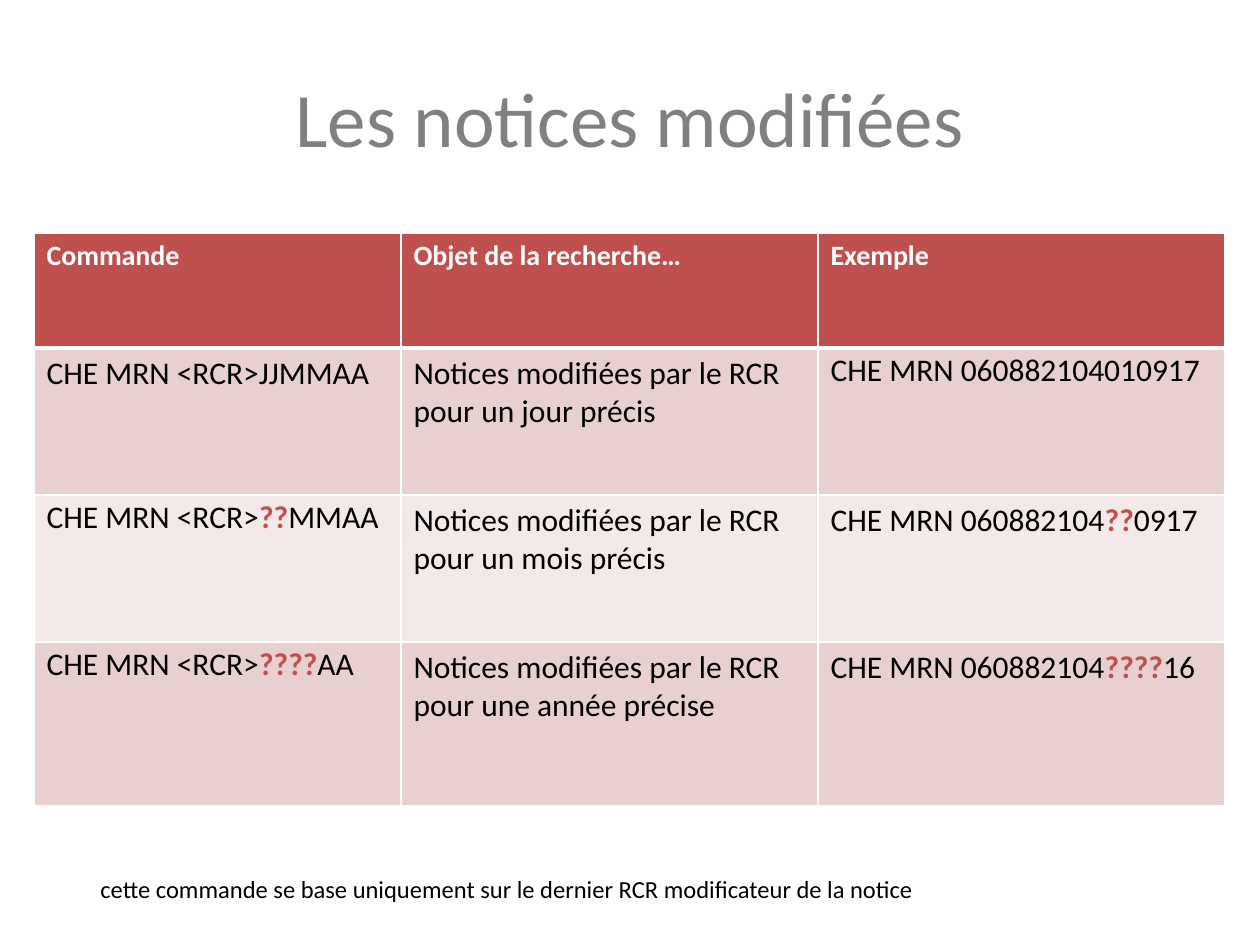
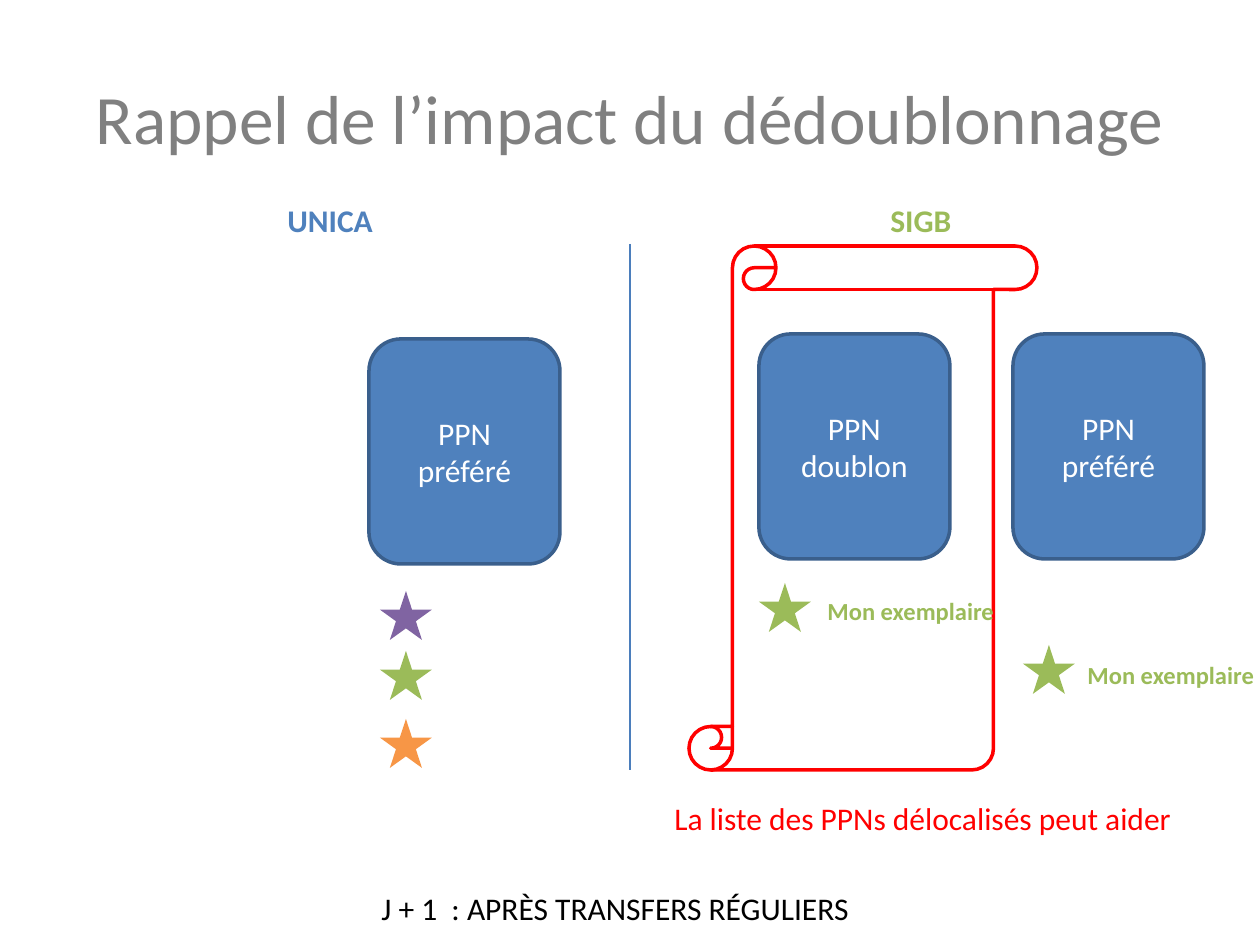
import collections
import itertools

import pptx
import pptx.dml.color
import pptx.enum.shapes
import pptx.enum.text
import pptx.oxml
import pptx.oxml.ns
import pptx.util
from lxml import etree

RGB = pptx.dml.color.RGBColor
SHAPE = pptx.enum.shapes.MSO_SHAPE
ALIGN = pptx.enum.text.PP_ALIGN
ANCHOR = pptx.enum.text.MSO_ANCHOR
Box = collections.namedtuple("Box", "left top width height")

PX_PER_INCH = 126
FONT = "Calibri"
TITLE_ONLY = 5
WHITE = RGB(0xFF, 0xFF, 0xFF)
BLACK = RGB(0x00, 0x00, 0x00)
GREY = RGB(0x80, 0x80, 0x80)
BRICK = RGB(0xC0, 0x50, 0x4D)
ROSE = RGB(0xE8, 0xD0, 0xD0)
PALE_ROSE = RGB(0xF4, 0xE9, 0xE9)
BLUE = RGB(0x4F, 0x81, 0xBD)
DIVIDER_BLUE = RGB(0x4B, 0x7E, 0xBC)
DARK_BLUE = RGB(0x3A, 0x5F, 0x8C)
GREEN = RGB(0x9B, 0xBB, 0x59)
PURPLE = RGB(0x80, 0x64, 0xA2)
ORANGE = RGB(0xF7, 0x96, 0x46)
RED = RGB(0xFF, 0x00, 0x00)

COMMANDS = [
    ("Commande", "Objet de la recherche…", "Exemple"),
    ("CHE MRN <RCR>JJMMAA", "Notices modifiées par le RCR pour un jour précis",
     "CHE MRN 060882104010917"),
    ("CHE MRN <RCR>??MMAA", "Notices modifiées par le RCR pour un mois précis",
     "CHE MRN 060882104??0917"),
    ("CHE MRN <RCR>????AA", "Notices modifiées par le RCR pour une année précise",
     "CHE MRN 060882104????16"),
]
COLUMN_WIDTHS = [367, 417, 407]
ROW_HEIGHTS = [115, 147, 147, 164]
ROW_FILLS = [BRICK, ROSE, PALE_ROSE, ROSE]
TIGHT_CELLS = {(1, 2), (2, 0), (3, 0)}


def px(length):
    """Turn px into EMU."""
    return round(length * pptx.util.Inches(1) / PX_PER_INCH)


def emu(box):
    """Turn a box in px into four EMU lengths."""
    return [px(length) for length in box]


def style(paragraph, size, color, bold=False):
    """Set the font of a whole paragraph."""
    font = paragraph.font
    font.name, font.size, font.bold = FONT, pptx.util.Pt(size), bold
    font.color.rgb = color


def titled_slide(deck, heading, size):
    """Add a slide with the shared grey title."""
    slide = deck.slides.add_slide(deck.slide_layouts[TITLE_ONLY])
    title = slide.shapes.title
    title.left, title.top, title.width, title.height = emu(Box(63, 38, 1134, 157))
    title.text_frame.text = heading
    title.text_frame.vertical_anchor = ANCHOR.MIDDLE
    title.text_frame.paragraphs[0].alignment = ALIGN.CENTER
    style(title.text_frame.paragraphs[0], size, GREY)
    return slide


def label(slide, box, wording, size, color, bold=False, wrap=False):
    """Add one line of free text."""
    frame = slide.shapes.add_textbox(*emu(box)).text_frame
    frame.word_wrap = wrap
    frame.text = wording
    style(frame.paragraphs[0], size, color, bold)


def preset(slide, kind, box, fill=None, line=None):
    """Add a preset shape without shadow."""
    shape = slide.shapes.add_shape(kind, *emu(box))
    shape.shadow.inherit = False
    if fill is None:
        shape.fill.background()
    else:
        shape.fill.solid()
        shape.fill.fore_color.rgb = fill
    if line is None:
        shape.line.fill.background()
    else:
        shape.line.color.rgb = line
        shape.line.width = pptx.util.Pt(2)
    return shape


def record(slide, left, top, kind):
    """Add the card of a catalogue record."""
    card = preset(slide, SHAPE.ROUNDED_RECTANGLE, Box(left, top, 191, 225), BLUE, DARK_BLUE)
    frame = card.text_frame
    frame.word_wrap = True
    frame.vertical_anchor = ANCHOR.MIDDLE
    frame.text = f"PPN {kind}"
    frame.paragraphs[0].alignment = ALIGN.CENTER
    style(frame.paragraphs[0], 18, WHITE)


def holding(slide, left, top, color):
    """Add the star of a library holding."""
    preset(slide, SHAPE.STAR_5_POINT, Box(left, top, 52, 49), color)


def cell_borders(cell, bottom):
    """Draw white borders around a cell, with the given bottom width in points."""
    properties = cell._tc.get_or_add_tcPr()
    for side, width in zip("LRTB", (1, 1, 1, bottom)):
        properties.append(pptx.oxml.parse_xml(
            f'<a:ln{side} {pptx.oxml.ns.nsdecls("a")} w="{pptx.util.Pt(width)}">'
            f'<a:solidFill><a:srgbClr val="{WHITE}"/></a:solidFill></a:ln{side}>'))


def fill_cell(cell, row, column):
    """Write and colour one cell, with its wildcards in bold brick."""
    header = row == 0
    cell_borders(cell, 3 if header else 1)
    cell.fill.solid()
    cell.fill.fore_color.rgb = ROW_FILLS[row]
    paragraph = cell.text_frame.paragraphs[0]
    style(paragraph, 16 if header else 18, WHITE if header else BLACK, header)
    if (row, column) in TIGHT_CELLS:
        paragraph.line_spacing = 0.9
    for wildcard, letters in itertools.groupby(COMMANDS[row][column], lambda c: c == "?"):
        run = paragraph.add_run()
        run.text = "".join(letters)
        if wildcard:
            run.font.bold = True
            run.font.color.rgb = BRICK


def command_table(slide, box):
    """Add the table of search commands."""
    table = slide.shapes.add_table(len(ROW_HEIGHTS), len(COLUMN_WIDTHS), *emu(box)).table
    for column, width in zip(table.columns, COLUMN_WIDTHS):
        column.width = px(width)
    for row, height in zip(table.rows, ROW_HEIGHTS):
        row.height = px(height)
    for row, column in itertools.product(range(len(ROW_HEIGHTS)), range(len(COLUMN_WIDTHS))):
        fill_cell(table.cell(row, column), row, column)


def divider(slide, box):
    """Add the upright line between both catalogues."""
    left, top, _, height = emu(box)
    line = slide.shapes.add_connector(
        pptx.enum.shapes.MSO_CONNECTOR.STRAIGHT, left, top, left, top + height)
    line.line.color.rgb = DIVIDER_BLUE
    line.line.width = pptx.util.Pt(0.75)
    etree.SubElement(line._element.spPr, pptx.oxml.ns.qn("a:effectLst"))


def shared_catalogue(slide, box):
    """Add the shared catalogue: one record and its holdings."""
    left, top = box.left, box.top
    label(slide, Box(left + 275, top, 123, 50), "UNICA", 18, BLUE, bold=True)
    record(slide, left + 369, top + 144, "préféré")
    for offset, color in ((396, PURPLE), (456, GREEN), (524, ORANGE)):
        holding(slide, left + 380, top + offset, color)


def local_catalogue(slide, box):
    """Add the local catalogue: two records, the list and the holdings."""
    left, top = box.left, box.top
    label(slide, Box(left + 248, top, 123, 50), "SIGB", 18, GREEN, bold=True)
    record(slide, left + 129, top + 139, "doublon")
    record(slide, left + 383, top + 139, "préféré")
    preset(slide, SHAPE.VERTICAL_SCROLL, Box(left + 59, top + 51, 348, 524), line=RED)
    for star_left, star_top, text_left, text_top in ((129, 388, 185, 395), (393, 450, 445, 459)):
        holding(slide, left + star_left, top + star_top, GREEN)
        label(slide, Box(left + text_left, top + text_top, 193, 43),
              "Mon exemplaire", 14, GREEN, bold=True)
    label(slide, Box(left + 32, top + 598, 528, 50),
          "La liste des PPNs délocalisés peut aider", 18, RED)


def modified_records_slide(deck):
    """Build the slide on modified records."""
    slide = titled_slide(deck, "Les notices modifiées", 44)
    command_table(slide, Box(34, 233, sum(COLUMN_WIDTHS), sum(ROW_HEIGHTS)))
    label(slide, Box(88, 868, 1147, 43),
          "cette commande se base uniquement sur le dernier RCR modificateur de la notice",
          14, BLACK, wrap=True)


def deduplication_slide(deck):
    """Build the slide on the effect of deduplication."""
    slide = titled_slide(deck, "Rappel de l’impact du dédoublonnage", 39.6)
    divider(slide, Box(630, 244, 0, 526))
    shared_catalogue(slide, Box(0, 195, 630, 648))
    local_catalogue(slide, Box(630, 195, 630, 648))
    label(slide, Box(369, 883, 498, 50), "J + 1  : APRÈS TRANSFERS RÉGULIERS", 18, BLACK)


def main():
    """Build and save the presentation."""
    deck = pptx.Presentation()
    deck.slide_width, deck.slide_height = px(1260), px(945)
    modified_records_slide(deck)
    deduplication_slide(deck)
    deck.save("out.pptx")


if __name__ == "__main__":
    main()
